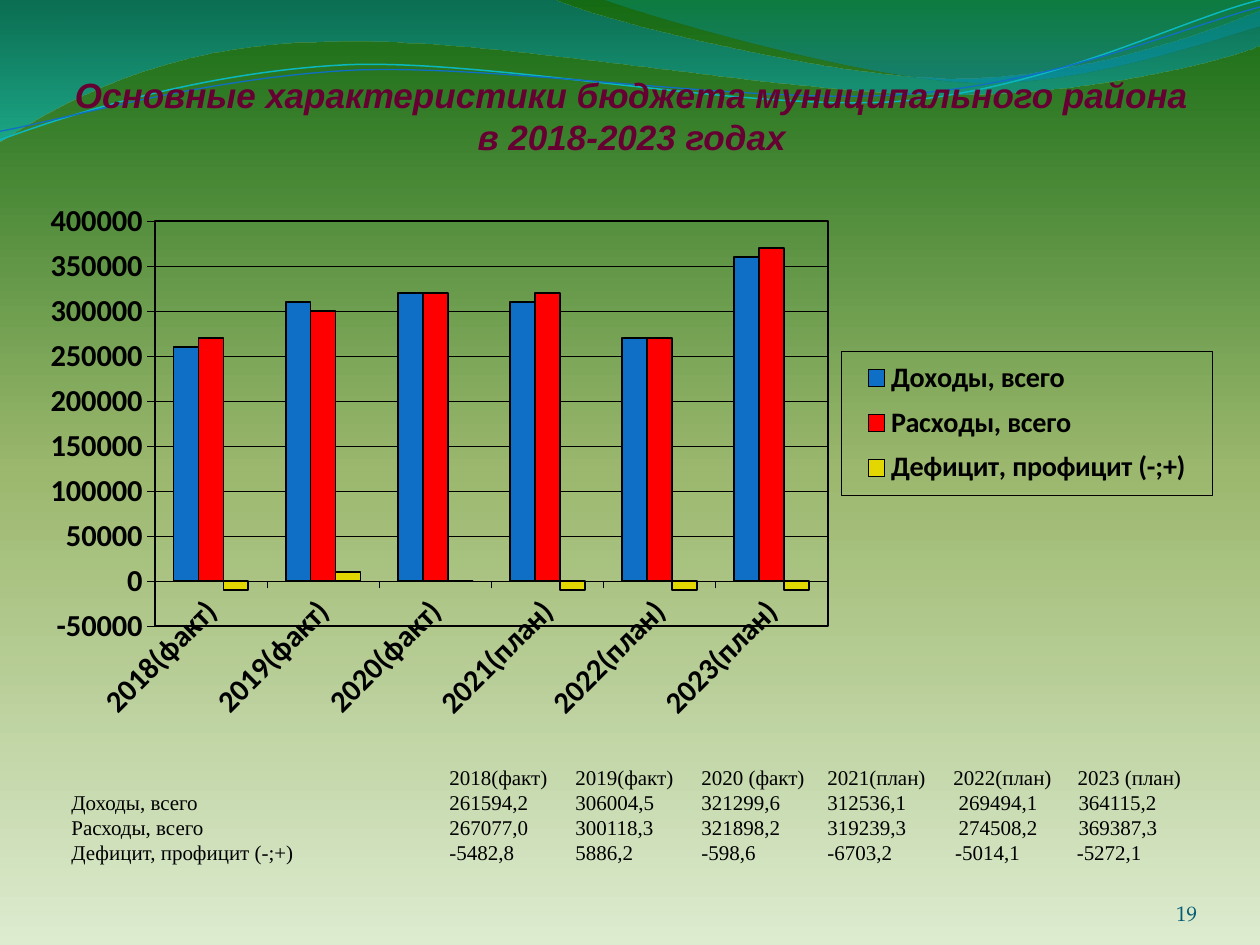
from lxml import etree
from pptx import Presentation
from pptx.chart.data import CategoryChartData
from pptx.dml.color import RGBColor
from pptx.enum.chart import XL_CHART_TYPE as ChartType
from pptx.enum.chart import XL_LEGEND_POSITION as LegendPosition
from pptx.enum.chart import XL_TICK_LABEL_POSITION as LabelPosition
from pptx.enum.chart import XL_TICK_MARK as TickMark
from pptx.enum.text import MSO_ANCHOR as Anchor
from pptx.enum.text import PP_ALIGN as Align
from pptx.oxml import parse_xml
from pptx.oxml.ns import nsdecls, qn
from pptx.util import Pt

BLACK = RGBColor(0x00, 0x00, 0x00)
PLUM = RGBColor(0x66, 0x00, 0x33)
TEAL = RGBColor(0x04, 0x5D, 0x75)
AQUA = RGBColor(0x0A, 0xB8, 0xBF)
BLUE = RGBColor(0x0F, 0x6F, 0xC6)
RED = RGBColor(0xFF, 0x00, 0x00)
YELLOW = RGBColor(0xE2, 0xD7, 0x00)
PALE_GREEN = RGBColor(0xDD, 0xEB, 0xCF)
MOSS = RGBColor(0x9C, 0xB8, 0x6E)
DEEP_GREEN = RGBColor(0x15, 0x6B, 0x13)
OCEAN = RGBColor(0x00, 0x74, 0xA1)
TURQUOISE = RGBColor(0x00, 0xC6, 0xCF)
LAGOON = RGBColor(0x00, 0xA1, 0xA9)
SKY = RGBColor(0x00, 0x8B, 0xBF)

TITLE = "Основные характеристики бюджета муниципального района в 2018-2023 годах"
CATEGORIES = ["2018(факт)", "2019(факт)", "2020(факт)",
              "2021(план)", "2022(план)", "2023(план)"]
SERIES = [
    ("Доходы, всего", BLUE, [260000, 310000, 320000, 310000, 270000, 360000]),
    ("Расходы, всего", RED, [270000, 300000, 320000, 320000, 270000, 370000]),
    ("Дефицит, профицит (-;+)", YELLOW, [-10000, 10000, 0, -10000, -10000, -10000]),
]
# Each row ends with the tab stops of its last two columns.
FIGURES = [
    (["", "2018(факт)", "2019(факт)", "2020 (факт)",
      "2021(план)", "2022(план)", "2023 (план)"], (504, 575)),
    (["Доходы, всего", "261594,2", "306004,5", "321299,6",
      "312536,1", "269494,1", "364115,2"], (507, 575.5)),
    (["Расходы, всего", "267077,0", "300118,3", "321898,2",
      "319239,3", "274508,2", "369387,3"], (507, 575.5)),
    (["Дефицит, профицит (-;+)", "-5482,8", "5886,2", "-598,6",
      "-6703,2", "-5014,1", "-5272,1"], (505, 574.5)),
]
CHART_BOX = (11.5, 101.5, 684, 326)

# A segment of one point is a straight line, of three points a Bezier curve.
WAVES = [
    ((0, 0), [[(317, 0)],
              [(343, 12), (478, 45), (546, 45)],
              [(615, 45), (690, 19), (720, 6)],
              [(720, 26)],
              [(708, 32), (626, 55), (537, 54)],
              [(448, 54), (275, 20), (185, 24)],
              [(93, 25), (33, 60), (0, 81)]],
     [(0, OCEAN, 45), (100, TURQUOISE, 55)]),
    ((345, 0), [[(366, 8), (491, 45), (554, 47)],
                [(616, 50), (692, 23), (720, 15)],
                [(720, 0)]],
     [(0, LAGOON, 30), (80, SKY, 45)]),
]
RIBBONS = [
    ((0, 80), [[(35, 67), (114, 41), (199, 37)],
               [(284, 34), (427, 64), (513, 58)],
               [(600, 51), (675, 11), (720, 0)]], AQUA, 0.85),
    ((0, 75), [[(34, 69), (118, 44), (204, 40)],
               [(290, 37), (430, 60), (516, 54)],
               [(602, 48), (678, 15), (720, 4)]], BLUE, 0.75),
]


def apply(target, values):
    for name, value in values.items():
        setattr(target, name, value)


def style_font(font, color, **values):
    apply(font, values)
    font.color.rgb = color


def style_line(line, color, width):
    line.color.rgb = color
    line.width = Pt(width)


def set_gradient(fill, element, stops, angle):
    fill.gradient()
    gradient = element.find(".//" + qn("a:gradFill"))
    stop_list = gradient.find(qn("a:gsLst"))
    for stop in list(stop_list):
        stop_list.remove(stop)
    for position, color, opacity in stops:
        stop = etree.SubElement(stop_list, qn("a:gs"), pos=str(position * 1000))
        color_element = etree.SubElement(stop, qn("a:srgbClr"), val=str(color))
        if opacity < 100:
            etree.SubElement(color_element, qn("a:alpha"), val=str(opacity * 1000))
    gradient.find(qn("a:lin")).set("ang", str(angle * 60000))


def add_curve(slide, start, segments, close):
    builder = slide.shapes.build_freeform(Pt(start[0]), Pt(start[1]))
    points = [(Pt(x), Pt(y)) for segment in segments for x, y in segment]
    builder.add_line_segments(points, close=close)
    shape = builder.convert_to_shape()
    shape.shadow.inherit = False
    lines = iter(shape.element.findall(".//" + qn("a:lnTo")))
    for segment in segments:
        group = [next(lines) for _ in segment]
        if len(group) == 3:
            curve = etree.Element(qn("a:cubicBezTo"))
            group[0].addprevious(curve)
            for line in group:
                curve.append(line[0])
                line.getparent().remove(line)
    return shape


def add_backdrop(slide):
    set_gradient(slide.background.fill, slide.element,
                 [(0, PALE_GREEN, 100), (50, MOSS, 100), (100, DEEP_GREEN, 100)], 270)
    for start, segments, stops in WAVES:
        shape = add_curve(slide, start, segments, True)
        set_gradient(shape.fill, shape.element, stops, 90)
        shape.line.fill.background()
    for start, segments, color, width in RIBBONS:
        shape = add_curve(slide, start, segments, False)
        shape.fill.background()
        style_line(shape.line, color, width)


def set_title(slide):
    title = slide.shapes.title
    title.element.getparent().append(title.element)
    apply(title, dict(left=Pt(37), top=Pt(0), width=Pt(648), height=Pt(90)))
    title.text_frame.text = TITLE
    apply(title.text_frame, dict(vertical_anchor=Anchor.BOTTOM, word_wrap=True, margin_left=0,
                                 margin_right=0, margin_top=Pt(3.6), margin_bottom=0))
    paragraph = title.text_frame.paragraphs[0]
    paragraph.alignment = Align.CENTER
    style_font(paragraph.runs[0].font, PLUM, name="Arial", size=Pt(20), bold=True, italic=True)


def set_layout(element, index, left, top, width, height, inner=False):
    for old in element.findall(qn("c:layout")):
        element.remove(old)
    layout = etree.Element(qn("c:layout"))
    manual = etree.SubElement(layout, qn("c:manualLayout"))
    chart_width, chart_height = CHART_BOX[2:]
    values = dict(xMode="edge", yMode="edge", x=left / chart_width, y=top / chart_height,
                  w=width / chart_width, h=height / chart_height)
    if inner:
        values = dict(layoutTarget="inner", **values)
    for name, value in values.items():
        etree.SubElement(manual, qn("c:" + name), val=str(value))
    element.insert(index, layout)


def add_border(element, width):
    element.append(parse_xml(
        f'<c:spPr {nsdecls("c", "a")}><a:noFill/><a:ln w="{Pt(width)}"><a:solidFill>'
        f'<a:srgbClr val="{BLACK}"/></a:solidFill></a:ln></c:spPr>'))


def add_budget_chart(slide):
    data = CategoryChartData(number_format="General")
    data.categories = CATEGORIES
    for name, _, values in SERIES:
        data.add_series(name, values)
    box = [Pt(length) for length in CHART_BOX]
    chart = slide.shapes.add_chart(ChartType.COLUMN_CLUSTERED, *box, data).chart
    chart.has_title = False
    label_style = dict(name="Calibri", size=Pt(17.4), bold=True)
    style_font(chart.font, BLACK, **label_style)
    plot = chart.plots[0]
    apply(plot, dict(gap_width=150, overlap=0, vary_by_categories=False))
    for series, (_, color, _) in zip(plot.series, SERIES):
        series.invert_if_negative = False
        series.format.fill.solid()
        series.format.fill.fore_color.rgb = color
        style_line(series.format.line, BLACK, 1)
    for axis in (chart.category_axis, chart.value_axis):
        apply(axis, dict(tick_label_position=LabelPosition.NEXT_TO_AXIS,
                         major_tick_mark=TickMark.OUTSIDE))
        style_font(axis.tick_labels.font, BLACK, **label_style)
        style_line(axis.format.line, BLACK, 0.25)
    category_element = chart.element.find(".//" + qn("c:catAx"))
    category_element.find(f"{qn('c:txPr')}/{qn('a:bodyPr')}").set("rot", str(-45 * 60000))
    apply(chart.value_axis, dict(minimum_scale=-50000, maximum_scale=400000, major_unit=50000))
    style_line(chart.value_axis.major_gridlines.format.line, BLACK, 0.25)
    chart.has_legend = True
    legend = chart.legend
    apply(legend, dict(position=LegendPosition.RIGHT, include_in_layout=False))
    legend_element = chart.element.find(".//" + qn("c:legend"))
    set_layout(legend_element, 1, 469.5, 99, 211.5, 82.5)
    add_border(legend_element, 0.25)
    style_font(legend.font, BLACK, name="Calibri", size=Pt(16.1), bold=True)
    plot_area = chart.element.find(".//" + qn("c:plotArea"))
    set_layout(plot_area, 0, 77, 24.8, 384.5, 231.5, inner=True)
    add_border(plot_area, 1)


def add_figures(slide):
    frame = slide.shapes.add_textbox(Pt(33.75), Pt(433.5), Pt(669.5), Pt(80)).text_frame
    frame.word_wrap = True
    for index, (row, last_stops) in enumerate(FIGURES):
        paragraph = frame.paragraphs[0] if index == 0 else frame.add_paragraph()
        paragraph.line_spacing = Pt(14.3)
        run = paragraph.add_run()
        run.text = "\t".join(row)
        style_font(run.font, BLACK, name="Times New Roman", size=Pt(12))
        tabs = etree.SubElement(paragraph._p.get_or_add_pPr(), qn("a:tabLst"))
        for stop in (216, 288, 360, 432, *last_stops):
            etree.SubElement(tabs, qn("a:tab"), pos=str(Pt(stop)), algn="l")


def add_slide_number(slide):
    frame = slide.shapes.add_textbox(Pt(624), Pt(500.5), Pt(60), Pt(28.5)).text_frame
    apply(frame, dict(vertical_anchor=Anchor.BOTTOM, word_wrap=True, margin_left=0,
                      margin_right=0, margin_top=0, margin_bottom=0))
    frame.text = "19"
    paragraph = frame.paragraphs[0]
    paragraph.alignment = Align.RIGHT
    style_font(paragraph.runs[0].font, TEAL, name="TeX Gyre Pagella", size=Pt(12))


def main():
    presentation = Presentation()
    apply(presentation, dict(slide_width=Pt(720), slide_height=Pt(540)))
    slide = presentation.slides.add_slide(presentation.slide_layouts[5])
    add_backdrop(slide)
    set_title(slide)
    add_budget_chart(slide)
    add_slide_number(slide)
    add_figures(slide)
    presentation.save("out.pptx")


if __name__ == "__main__":
    main()
